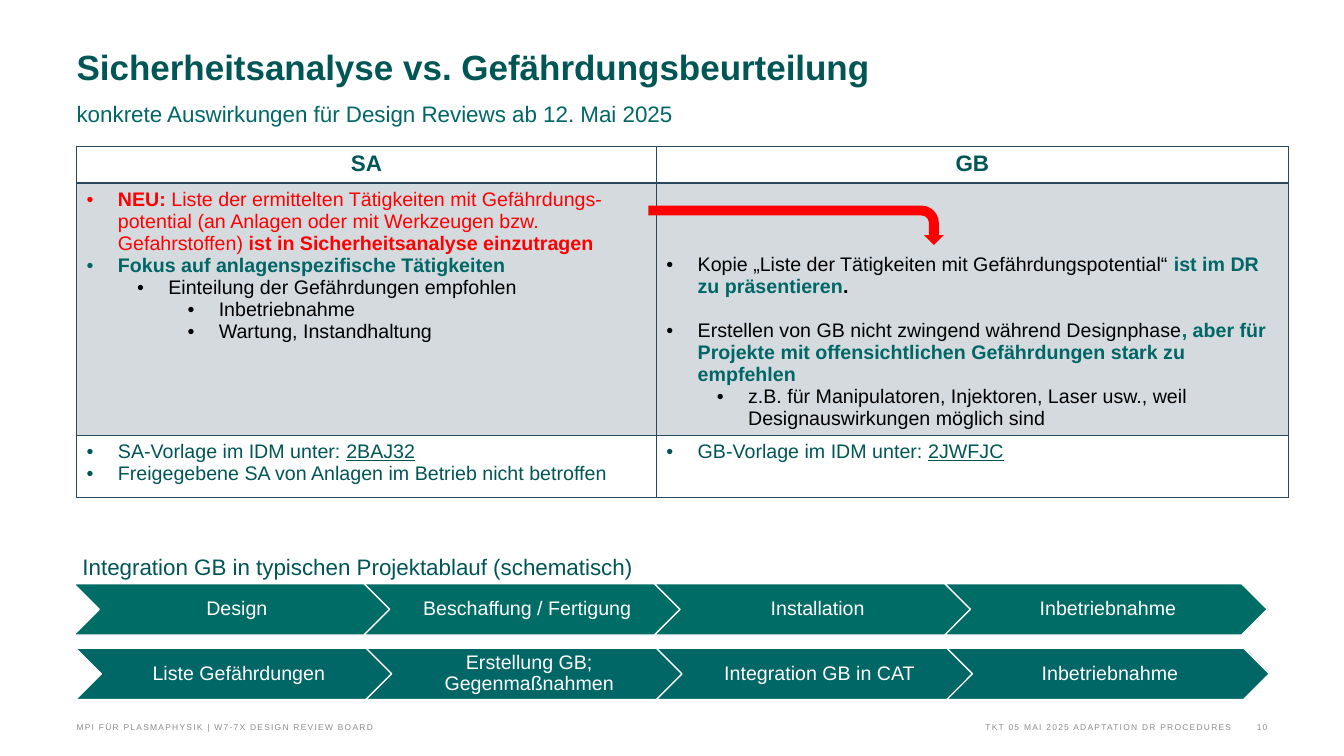
from dataclasses import dataclass

from lxml import etree
from pptx import Presentation
from pptx.dml.color import RGBColor
from pptx.enum.shapes import MSO_SHAPE
from pptx.enum.text import MSO_ANCHOR, PP_ALIGN
from pptx.oxml.ns import qn
from pptx.util import Pt

CHEVRON, BENT_ARROW = MSO_SHAPE.CHEVRON, MSO_SHAPE.BENT_ARROW
LEFT, CENTER, RIGHT = PP_ALIGN.LEFT, PP_ALIGN.CENTER, PP_ALIGN.RIGHT
TOP, MIDDLE, BOTTOM = MSO_ANCHOR.TOP, MSO_ANCHOR.MIDDLE, MSO_ANCHOR.BOTTOM
EMU_PER_PX = 9144  # 100 px to the inch


@dataclass(frozen=True)
class Theme:
    font: str = "Arial"
    dark: str = "005555"
    teal: str = "006666"
    project: str = "006C66"
    navy: str = "29485D"
    red: str = "FF0000"
    black: str = "000000"
    white: str = "FFFFFF"
    grey: str = "8C8C8C"
    title_size: int = 25
    heading_size: int = 16
    body_size: int = 14
    footer_size: int = 6


THEME = Theme()

# Bullets: (depth, space before in pt, [(text, colour, bold, underline), ...])
SA_RULES = [
    (0, 0, [("NEU: ", THEME.red, True, False),
            ("Liste der ermittelten Tätigkeiten mit Gefährdungs-potential "
             "(an Anlagen oder mit Werkzeugen bzw. Gefahrstoffen) ", THEME.red, False, False),
            ("ist in Sicherheitsanalyse einzutragen", THEME.red, True, False)]),
    (0, 0, [("Fokus auf anlagenspezifische Tätigkeiten", THEME.teal, True, False)]),
    (1, 0, [("Einteilung der Gefährdungen empfohlen", THEME.black, False, False)]),
    (2, 0, [("Inbetriebnahme", THEME.black, False, False)]),
    (2, 0, [("Wartung, Instandhaltung", THEME.black, False, False)]),
]
GB_RULES = [
    (0, 0, [("Kopie „Liste der Tätigkeiten mit Gefährdungspotential“ ", THEME.black, False, False),
            ("ist im DR zu präsentieren", THEME.teal, True, False),
            (".", THEME.black, True, False)]),
    (0, 16, [("Erstellen von GB nicht zwingend während Designphase", THEME.black, False, False),
             (", aber für Projekte mit offensichtlichen Gefährdungen stark zu empfehlen",
              THEME.teal, True, False)]),
    (1, 0, [("z.B. für Manipulatoren, Injektoren, Laser usw., weil "
             "Designauswirkungen möglich sind", THEME.black, False, False)]),
]
SA_TEMPLATE = [
    (0, 0, [("SA-Vorlage im IDM unter: ", THEME.dark, False, False),
            ("2BAJ32", THEME.dark, False, True)]),
    (0, 0, [("Freigegebene SA von Anlagen im Betrieb nicht betroffen", THEME.dark, False, False)]),
]
GB_TEMPLATE = [
    (0, 0, [("GB-Vorlage im IDM unter: ", THEME.dark, False, False),
            ("2JWFJC", THEME.dark, False, True)]),
]
PROJECT_STEPS = ["Design", "Beschaffung / Fertigung", "Installation", "Inbetriebnahme"]
GB_STEPS = ["Liste Gefährdungen", "Erstellung GB; Gegenmaßnahmen",
            "Integration GB in CAT", "Inbetriebnahme"]


def px(length):
    return round(length * EMU_PER_PX)


def style(font, size, color, bold=False, underline=False):
    font.name, font.size = THEME.font, Pt(size)
    font.bold, font.underline = bold, underline
    font.color.rgb = RGBColor.from_string(color)


def add_label(slide, box, text, size, color, align=LEFT, anchor=TOP, margins=(0, 0)):
    frame = slide.shapes.add_textbox(*map(px, box)).text_frame
    frame.word_wrap = True
    frame.vertical_anchor = anchor
    frame.margin_left = frame.margin_right = px(margins[0])
    frame.margin_top = frame.margin_bottom = px(margins[1])
    frame.text = text
    label = frame.paragraphs[0]
    label.alignment = align
    for run in label.runs:
        style(run.font, size, color)
    return label


def add_plain_shape(slide, kind, box, color):
    shape = slide.shapes.add_shape(kind, *map(px, box))
    shape.shadow.inherit = False
    shape.fill.solid()
    shape.fill.fore_color.rgb = RGBColor.from_string(color)
    shape.line.fill.background()
    return shape


def add_heading(slide, box):
    heading = add_label(slide, box, "Sicherheitsanalyse vs. Gefährdungsbeurteilung\v"
                        "konkrete Auswirkungen für Design Reviews ab 12. Mai 2025",
                        THEME.heading_size, THEME.teal)
    heading.line_spacing = Pt(28)
    style(heading.runs[0].font, THEME.title_size, THEME.dark, bold=True)


def add_borders(cell, bottom_width):
    properties = cell._tc.get_or_add_tcPr()
    widths = {"a:lnL": 1, "a:lnR": 1, "a:lnT": 1, "a:lnB": bottom_width}
    for position, (side, width) in enumerate(widths.items()):
        border = etree.Element(qn(side), w=str(Pt(width)))
        fill = etree.SubElement(border, qn("a:solidFill"))
        etree.SubElement(fill, qn("a:srgbClr"), val=THEME.navy)
        properties.insert(position, border)


def shade(cell):
    cell.fill.solid()
    cell.fill.fore_color.rgb = RGBColor.from_string(THEME.navy)
    tint = cell._tc.tcPr.find(qn("a:solidFill")).find(qn("a:srgbClr"))
    etree.SubElement(tint, qn("a:alpha"), val="20000")


def fill_bullets(frame, bullets):
    for index, (depth, space_before, parts) in enumerate(bullets):
        bullet = frame.add_paragraph() if index else frame.paragraphs[0]
        bullet.level = depth
        properties = bullet._p.get_or_add_pPr()
        properties.set("marL", str(px(31 + 50 * depth)))
        properties.set("indent", str(px(-31)))
        if space_before:
            bullet.space_before = Pt(space_before)
        etree.SubElement(properties, qn("a:buFont"), typeface=THEME.font)
        etree.SubElement(properties, qn("a:buChar"), char="•")
        for text, color, bold, underline in parts:
            run = bullet.add_run()
            run.text = text
            style(run.font, THEME.body_size, color, bold, underline)


def add_comparison(slide, box):
    table = slide.shapes.add_table(3, 2, *map(px, box)).table
    table.first_row = table.horz_banding = False
    for column, width in zip(table.columns, (575, 627)):
        column.width = px(width)
    for row, height in zip(table.rows, (35, 250, 62)):
        row.height = px(height)
    # Column headings
    for column, name in enumerate(("SA", "GB")):
        cell = table.cell(0, column)
        cell.text = name
        heading = cell.text_frame.paragraphs[0]
        heading.alignment = CENTER
        style(heading.runs[0].font, THEME.heading_size, THEME.dark, bold=True)
    # Rules and templates
    for row, contents in enumerate(((SA_RULES, GB_RULES), (SA_TEMPLATE, GB_TEMPLATE)), 1):
        for column, bullets in enumerate(contents):
            fill_bullets(table.cell(row, column).text_frame, bullets)
    table.cell(1, 1).vertical_anchor = BOTTOM
    # Fills and borders
    for row in range(3):
        for column in range(2):
            cell = table.cell(row, column)
            if row == 1:
                shade(cell)
            else:
                cell.fill.background()
            add_borders(cell, bottom_width=2 if row == 0 else 1)


def add_transfer_arrow(slide, box):
    left, top, width, height = box
    # The preset points right, so it is placed upright and turned about its centre
    upright = (left + (width - height) / 2, top + (height - width) / 2, height, width)
    arrow = add_plain_shape(slide, BENT_ARROW, upright, THEME.red)
    arrow.rotation = 90


def add_process(slide, box, steps, color):
    left, top, width, height = box
    step_width = 320
    pitch = (width - step_width) / (len(steps) - 1)
    for index, name in enumerate(steps):
        step = add_plain_shape(slide, CHEVRON,
                               (left + index * pitch, top, step_width, height), color)
        step.line.color.rgb = RGBColor.from_string(THEME.white)
        step.line.width = Pt(1)
        frame = step.text_frame
        frame.word_wrap = True
        frame.vertical_anchor = MIDDLE
        frame.margin_left = px(6)
        frame.margin_right = frame.margin_top = frame.margin_bottom = px(2)
        frame.text = name
        caption = frame.paragraphs[0]
        caption.alignment = CENTER
        caption.line_spacing = 0.9
        style(caption.runs[0].font, THEME.body_size, THEME.white)


def add_footer(slide, box):
    left, top, width, height = box
    entries = [
        (0, 666, "MPI FÜR PLASMAPHYSIK | W7-7X DESIGN REVIEW BOARD", LEFT),
        (width - 806, 770, "TKT 05 MAI 2025 ADAPTATION DR PROCEDURES", RIGHT),
        (width - 36, 36, "10", RIGHT),
    ]
    for offset, entry_width, text, align in entries:
        entry = add_label(slide, (left + offset, top, entry_width, height), text,
                          THEME.footer_size, THEME.grey, align, BOTTOM)
        entry.runs[0]._r.get_or_add_rPr().set("spc", "90")


def main():
    deck = Presentation()
    deck.slide_width, deck.slide_height = px(1333), px(750)
    slide = deck.slides.add_slide(deck.slide_layouts[6])
    add_heading(slide, (76, 48, 1047, 98))
    add_comparison(slide, (76, 145, 1202, 347))
    add_transfer_arrow(slide, (643, 204, 293, 39))
    # Project flow
    add_label(slide, (72, 544, 667, 37), "Integration GB in typischen Projektablauf (schematisch)",
              THEME.heading_size, THEME.dark, margins=(10, 5))
    add_process(slide, (73, 579, 1184, 51), PROJECT_STEPS, THEME.project)
    add_process(slide, (75, 643, 1184, 51), GB_STEPS, THEME.teal)
    add_footer(slide, (76, 710, 1181, 16))
    deck.save("out.pptx")


if __name__ == "__main__":
    main()
